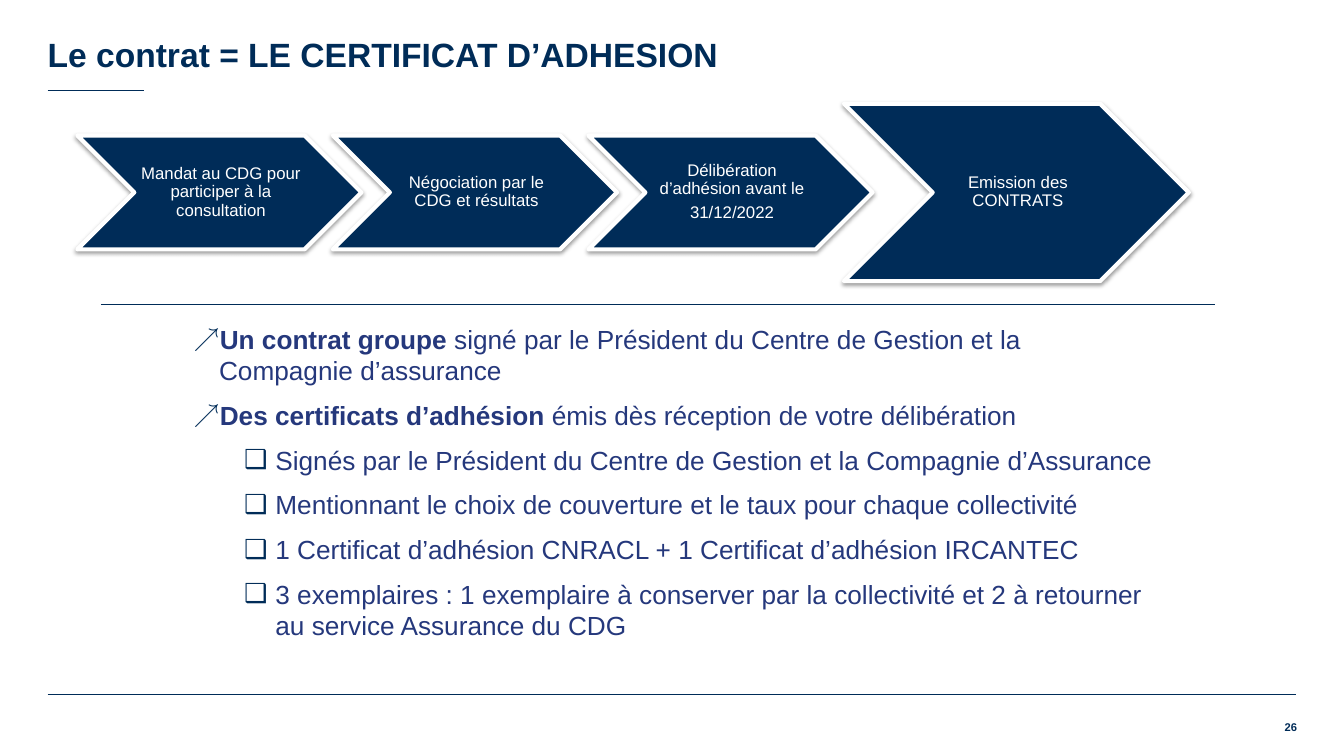
from lxml import etree
from pptx import Presentation
from pptx.dml.color import RGBColor
from pptx.enum.shapes import MSO_CONNECTOR, MSO_SHAPE
from pptx.enum.text import MSO_ANCHOR, MSO_AUTO_SIZE, PP_ALIGN
from pptx.oxml.ns import qn
from pptx.util import Cm, Pt

LEFT, CENTER, RIGHT = PP_ALIGN.LEFT, PP_ALIGN.CENTER, PP_ALIGN.RIGHT
TOP, MIDDLE, BOTTOM = MSO_ANCHOR.TOP, MSO_ANCHOR.MIDDLE, MSO_ANCHOR.BOTTOM
NO_FIT = MSO_AUTO_SIZE.NONE
CHEVRON, STRAIGHT = MSO_SHAPE.CHEVRON, MSO_CONNECTOR.STRAIGHT

NAVY, BLUE, WHITE = "002C58", "25387C", "FFFFFF"


def color(code):
    return RGBColor.from_string(code)


def node(parent, tag, **attrs):
    item = etree.SubElement(parent, qn(tag))
    for name, value in attrs.items():
        item.set(name, str(value))
    return item


class Deck:
    font = "Arial"

    def __init__(self, slide):
        self.slide = slide
        self.shapes = slide.shapes

    def place(self, shape, x, y, w, h):
        shape.left, shape.top = Cm(x), Cm(y)
        shape.width, shape.height = Cm(w), Cm(h)

    def frame(self, shape, anchor, margins=(0, 0, 0, 0)):
        frame = shape.text_frame
        frame.word_wrap = True
        frame.auto_size = NO_FIT
        frame.vertical_anchor = anchor
        (frame.margin_left, frame.margin_top,
         frame.margin_right, frame.margin_bottom) = map(Cm, margins)
        return frame

    def style(self, para, size, code, bold=False, align=LEFT):
        para.alignment = align
        for run in para.runs:
            run.font.name = self.font
            run.font.size = Pt(size)
            run.font.bold = bold
            run.font.color.rgb = color(code)

    def title(self, text, x, y, w, h):
        shape = self.shapes.title
        self.place(shape, x, y, w, h)
        frame = self.frame(shape, BOTTOM)
        frame.text = text
        self.style(frame.paragraphs[0], 24, NAVY, bold=True)

    def label(self, text, x, y, w, h):
        box = self.shapes.add_textbox(Cm(x), Cm(y), Cm(w), Cm(h))
        frame = self.frame(box, TOP)
        frame.text = text
        self.style(frame.paragraphs[0], 8, NAVY, bold=True, align=RIGHT)

    def rule(self, x, y, w, weight):
        line = self.shapes.add_connector(
            STRAIGHT, Cm(x), Cm(y), Cm(x + w), Cm(y))
        line.line.color.rgb = color(NAVY)
        line.line.width = Pt(weight)
        node(line._element.spPr, "a:effectLst")

    def step(self, text, x, y, w, h):
        shape = self.shapes.add_shape(CHEVRON, Cm(x), Cm(y), Cm(w), Cm(h))
        shape.fill.solid()
        shape.fill.fore_color.rgb = color(NAVY)
        shape.line.color.rgb = color(WHITE)
        shape.line.width = Pt(3)
        # Soft shadow below the arrow
        shape.shadow.inherit = False
        effects = shape._element.spPr.find(qn("a:effectLst"))
        shade = node(effects, "a:outerShdw", blurRad=Pt(3.1), dist=Pt(1.6),
                     dir=5400000, rotWithShape=0)
        black = node(shade, "a:srgbClr", val="000000")
        node(black, "a:alpha", val=38000)
        frame = self.frame(shape, MIDDLE, (0.13, 0.05, 0.05, 0.05))
        frame.text = text
        for para in frame.paragraphs:
            para.line_spacing = 0.9
            para.space_after = Pt(4.2)
            self.style(para, 12, WHITE, align=CENTER)

    def list(self, items, x, y, w, h):
        body = self.slide.placeholders[1]
        self.place(body, x, y, w, h)
        frame = self.frame(body, TOP)
        for i, (level, lead, text) in enumerate(items):
            para = frame.add_paragraph() if i else frame.paragraphs[0]
            para.level = level
            para.line_spacing = 1.0
            para.space_before = Pt(9.5 if i else 0)
            self.bullet(para, *BULLETS[level])
            para.text = lead + text
            if lead:
                para.text = lead
                para.add_run().text = text
            self.style(para, 18.7, BLUE)
            para.runs[0].font.bold = bool(lead)

    def bullet(self, para, mark, left, hang):
        props = para._p.get_or_add_pPr()
        props.set("marL", str(Cm(left)))
        props.set("indent", str(-Cm(hang)))
        tint = node(props, "a:buClr")
        node(tint, "a:srgbClr", val=NAVY)
        node(props, "a:buFont", typeface=self.font)
        node(props, "a:buChar", char=mark)


# Level: mark, left indent, hanging indent
BULLETS = {1: ("↗", 3.18, 0.64), 2: ("❑", 4.6, 0.79)}

STEPS = [
    "Mandat au CDG pour participer à la consultation",
    "Négociation par le CDG et résultats",
    "Délibération d’adhésion avant le\n31/12/2022",
    "Emission des CONTRATS",
]

ITEMS = [
    (1, "Un contrat groupe ",
     "signé par le Président du Centre de Gestion et la Compagnie d’assurance"),
    (1, "Des certificats d’adhésion ",
     "émis dès réception de votre délibération"),
    (2, "", "Signés par le Président du Centre de Gestion et la Compagnie "
            "d’Assurance"),
    (2, "", "Mentionnant le choix de couverture et le taux pour chaque "
            "collectivité"),
    (2, "", "1 Certificat d’adhésion CNRACL + 1 Certificat d’adhésion "
            "IRCANTEC"),
    (2, "", "3 exemplaires : 1 exemplaire à conserver par la collectivité "
            "et 2 à retourner au service Assurance du CDG"),
]


def main():
    prs = Presentation()
    prs.slide_width, prs.slide_height = Cm(33.87), Cm(19.05)
    deck = Deck(prs.slides.add_slide(prs.slide_layouts[1]))

    # Heading and page rules
    deck.rule(1.2, 17.5, 31.46, 0.5)
    deck.rule(1.2, 2.27, 2.42, 0.5)
    deck.title("Le contrat = LE CERTIFICAT D’ADHESION", 1.2, 0, 31.47, 1.86)

    # Process arrows on one axis, the last one enlarged
    left, pitch, axis = 1.95, 6.44, 4.85
    for i, text in enumerate(STEPS):
        w, h = (8.69, 4.47) if text == STEPS[-1] else (7.16, 2.87)
        deck.step(text, left + i * pitch, axis - h / 2, w, h)

    # Details
    deck.rule(2.54, 7.67, 28.07, 1)
    deck.list(ITEMS, 2.34, 8.14, 26.82, 10.3)

    # Page number
    deck.label("26", 31.7, 18.16, 0.99, 0.51)

    prs.save("out.pptx")


if __name__ == "__main__":
    main()
